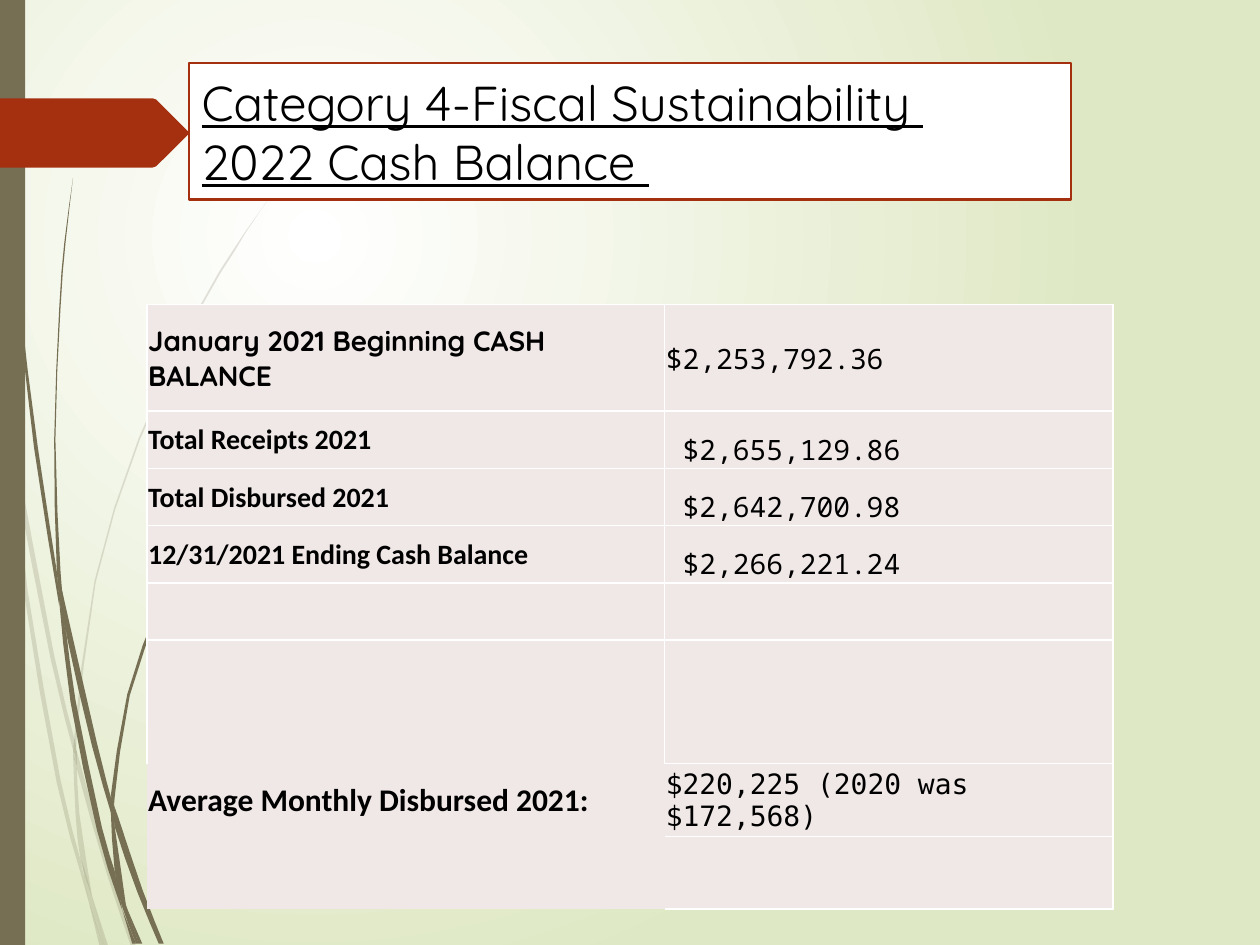
from lxml.etree import SubElement
from pptx import Presentation
from pptx.dml.color import RGBColor
from pptx.enum.text import MSO_ANCHOR, PP_ALIGN
from pptx.enum.shapes import MSO_SHAPE
from pptx.oxml import parse_xml
from pptx.oxml.ns import nsdecls, qn
from pptx.util import Pt

WHITE = RGBColor(0xFF, 0xFF, 0xFF)
BLACK = RGBColor(0, 0, 0)
PALE_GREEN = RGBColor(0xDF, 0xE8, 0xC4)
OLIVE = RGBColor(0x76, 0x6F, 0x54)
RUST = RGBColor(0xA5, 0x30, 0x10)
BLUSH = RGBColor(0xF0, 0xE8, 0xE7)

TITLE = "Category 4-Fiscal Sustainability \v2022 Cash Balance "
MONO = "Noto Sans Mono"
# Label, label font, label size, value, value font, value anchor, row height
ROWS = [
    ("January 2021 Beginning CASH BALANCE", "Quicksand", 16,
     "$2,253,792.36", MONO, MSO_ANCHOR.MIDDLE, 61),
    ("Total Receipts 2021", "Calibri", 16, " $2,655,129.86", MONO, MSO_ANCHOR.BOTTOM, 32.7),
    ("Total Disbursed 2021", "Calibri", 16, " $2,642,700.98", MONO, MSO_ANCHOR.BOTTOM, 32.7),
    ("12/31/2021 Ending Cash Balance", "Calibri", 16,
     " $2,266,221.24", MONO, MSO_ANCHOR.BOTTOM, 32.7),
    ("", "Calibri", 16, "", MONO, MSO_ANCHOR.BOTTOM, 32.7),
    ("", "Calibri", 16, "", MONO, MSO_ANCHOR.BOTTOM, 70.7),
    ("Average Monthly Disbursed 2021:", "Calibri", 18,
     "$220,225 (2020 was $172,568)", "DejaVu Sans Mono", MSO_ANCHOR.MIDDLE, 41.5),
    ("", "Calibri", 16, "", MONO, MSO_ANCHOR.MIDDLE, 41.5),
]
COLUMN_WIDTHS = (295.8, 256.2)
# Cells whose borders differ from the full frame: (row, column) -> sides drawn
OPEN_BORDERS = {(5, 0): "LTR", (6, 0): "", (7, 0): "", (6, 1): "TRB", (7, 1): "TRB"}

# Grass blades: left and right edge, top to bottom, in units of 0.72 pt
UNIT = 0.72
PALE_BLADES = [
    ([(0, 282), (6, 322), (8, 350)], [(0, 299), (7, 344), (8, 350)]),
    ([(10, 345), (12, 376), (40, 522), (59, 599)], [(10, 345), (43, 520), (59, 586)]),
    ([(61, 596), (61, 610), (85, 694), (104, 751)], [(61, 596), (64, 607), (88, 692), (108, 751)]),
    ([(73, 711), (83, 751)], [(73, 711), (86, 751)]),
    ([(8, 350), (19, 470), (45, 621), (64, 693), (70, 714)],
     [(8, 350), (12, 376), (22, 469), (48, 619), (64, 683), (70, 714)]),
    ([(58, 599), (60, 646), (64, 683), (73, 711)], [(58, 599), (61, 610), (63, 646), (73, 711)]),
    ([(217, 153), (201, 175), (186, 197), (158, 244), (110, 348), (75, 461), (59, 584), (61, 596)],
     [(217, 153), (201, 175), (187, 198), (159, 245), (111, 349), (76, 462), (61, 584), (61, 596)]),
    ([(70, 714), (79, 751)], [(70, 714), (82, 751)]),
    ([(59, 586), (58, 599), (61, 608)], [(59, 586), (61, 596), (61, 610)]),
    ([(65, 683), (70, 714), (82, 751)], [(65, 683), (73, 711), (83, 751)]),
]
DARK_BLADES = [
    ([(2, 0), (3, 48), (5, 110), (14, 233), (27, 355), (47, 481)],
     [(3, 0), (4, 48), (6, 109), (15, 232), (30, 355), (45, 453), (47, 481)]),
    ([(50, 472), (53, 505), (73, 592), (88, 645)], [(50, 472), (77, 590), (88, 633)]),
    ([(91, 641), (91, 656), (109, 708), (126, 749)], [(91, 641), (94, 649), (113, 706), (130, 749)]),
    ([(47, 477), (56, 557), (77, 659), (92, 708), (97, 722)],
     [(47, 477), (53, 505), (60, 556), (81, 657), (91, 691), (97, 722)]),
    ([(58, 141), (51, 193), (47, 245), (43, 349), (45, 449), (49, 472)],
     [(58, 141), (52, 193), (48, 245), (44, 349), (48, 453), (50, 472)]),
    ([(100, 719), (110, 749)], [(100, 719), (113, 749)]),
    ([(45, 449), (47, 477), (53, 505)], [(45, 449), (50, 472), (53, 505)]),
    ([(215, 344), (203, 358), (191, 373), (168, 405), (129, 474), (101, 551), (88, 631)],
     [(216, 344), (203, 359), (191, 374), (169, 406), (131, 476), (103, 552), (91, 633), (91, 641)]),
    ([(97, 722), (105, 749)], [(97, 722), (108, 749)]),
    ([(88, 645), (91, 691), (100, 719)], [(88, 645), (91, 656), (100, 719)]),
    ([(88, 631), (88, 645), (91, 656)], [(88, 631), (91, 641), (91, 656)]),
    ([(91, 691), (96, 717), (108, 749)], [(91, 691), (96, 706), (110, 749)]),
]
ARROW = [(149, 107), (124, 132), (121, 133), (111, 133), (0, 133), (0, 78), (111, 78),
         (121, 78), (124, 79), (149, 104)]


def smooth(edge):
    """The edge with a Catmull-Rom midpoint between each pair of points."""
    padded = [edge[0], *edge, edge[-1]]
    curve = [edge[0]]
    for a, b, c, d in zip(padded, padded[1:], padded[2:], padded[3:]):
        middle = tuple((9 * (q + r) - p - s) / 16 for p, q, r, s in zip(a, b, c, d))
        curve += [middle, c]
    return curve


def paint(shape, color, alpha=None):
    shape.shadow.inherit = False
    shape.fill.solid()
    shape.fill.fore_color.rgb = color
    shape.line.fill.background()
    if alpha:
        rgb = shape.fill._xPr.find(qn("a:solidFill"))[0]
        SubElement(rgb, qn("a:alpha"), val=str(alpha * 1000))


def add_outline(shapes, points, color, alpha=None):
    scaled = [(Pt(x * UNIT), Pt(y * UNIT)) for x, y in dict.fromkeys(points)]
    builder = shapes.build_freeform(*scaled[0])
    builder.add_line_segments(scaled[1:], close=True)
    paint(builder.convert_to_shape(), color, alpha)


def set_borders(cell, sides):
    props = cell._tc.get_or_add_tcPr()
    for position, side in enumerate("LRTB"):
        fill = f'<a:solidFill><a:srgbClr val="{WHITE}"/></a:solidFill>'
        if side not in sides:
            fill = "<a:noFill/>"
        props.insert(position, parse_xml(
            f'<a:ln{side} {nsdecls("a")} w="{Pt(1)}">{fill}</a:ln{side}>'))


def style(font, name, size, bold=False):
    font.name, font.size, font.bold = name, Pt(size), bold
    font.color.rgb = BLACK


def fill_cell(cell, text, font, size, bold, anchor):
    cell.margin_left = cell.margin_right = cell.margin_top = Pt(0.7)
    cell.margin_bottom = 0
    cell.vertical_anchor = anchor
    cell.fill.solid()
    cell.fill.fore_color.rgb = BLUSH
    cell.text_frame.text = text
    for run in cell.text_frame.paragraphs[0].runs:
        style(run.font, font, size, bold)


def main():
    deck = Presentation()
    deck.slide_width, deck.slide_height = Pt(720), Pt(540)
    slide = deck.slides.add_slide(deck.slide_layouts[5])

    # Radial background, centred in the upper left quarter
    backdrop = slide.background.fill
    backdrop.gradient()
    for stop, color in zip(backdrop.gradient_stops, (WHITE, PALE_GREEN)):
        stop.color.rgb = color
    gradient = slide.background._cSld.find(".//" + qn("a:gradFill"))
    gradient.replace(gradient.find(qn("a:lin")), parse_xml(
        f'<a:path {nsdecls("a")} path="circle">'
        '<a:fillToRect l="50000" t="50000" r="100000" b="100000"/></a:path>'))

    # Two tufts of grass, side bar and arrow
    for blades, alpha in ((PALE_BLADES, 20), (DARK_BLADES, None)):
        tuft = slide.shapes.add_group_shape()
        for left, right in blades:
            add_outline(tuft.shapes, smooth(left) + smooth(right)[::-1], OLIVE, alpha)
    side_bar = slide.shapes.add_shape(MSO_SHAPE.RECTANGLE, 0, 0, Pt(14.4), Pt(540))
    paint(side_bar, OLIVE)
    add_outline(slide.shapes, ARROW, RUST)

    # Title, in front of the grass
    title = slide.shapes.title
    slide.shapes._spTree.append(title._element)
    title.left, title.top, title.width, title.height = Pt(108), Pt(36), Pt(504), Pt(78)
    title.fill.solid()
    title.fill.fore_color.rgb = WHITE
    title.line.color.rgb = RUST
    title.line.width = Pt(1.25)
    title.text_frame.text = TITLE
    title.text_frame.vertical_anchor = MSO_ANCHOR.MIDDLE
    heading = title.text_frame.paragraphs[0]
    heading.alignment = PP_ALIGN.LEFT
    for run in heading.runs:
        style(run.font, "Quicksand", 28)
        run.font.underline = True

    # Cash balance table
    table = slide.shapes.add_table(len(ROWS), 2, Pt(84), Pt(174), Pt(sum(COLUMN_WIDTHS)),
                                   Pt(sum(row[-1] for row in ROWS))).table
    table.first_row = table.horz_banding = False
    for column, width in zip(table.columns, COLUMN_WIDTHS):
        column.width = Pt(width)
    for r, (label, font, size, value, value_font, anchor, height) in enumerate(ROWS):
        table.rows[r].height = Pt(height)
        fill_cell(table.cell(r, 0), label, font, size, True, MSO_ANCHOR.MIDDLE)
        fill_cell(table.cell(r, 1), value, value_font, 16, False, anchor)
        for c in range(2):
            set_borders(table.cell(r, c), OPEN_BORDERS.get((r, c), "LRTB"))

    deck.save("out.pptx")


if __name__ == "__main__":
    main()
